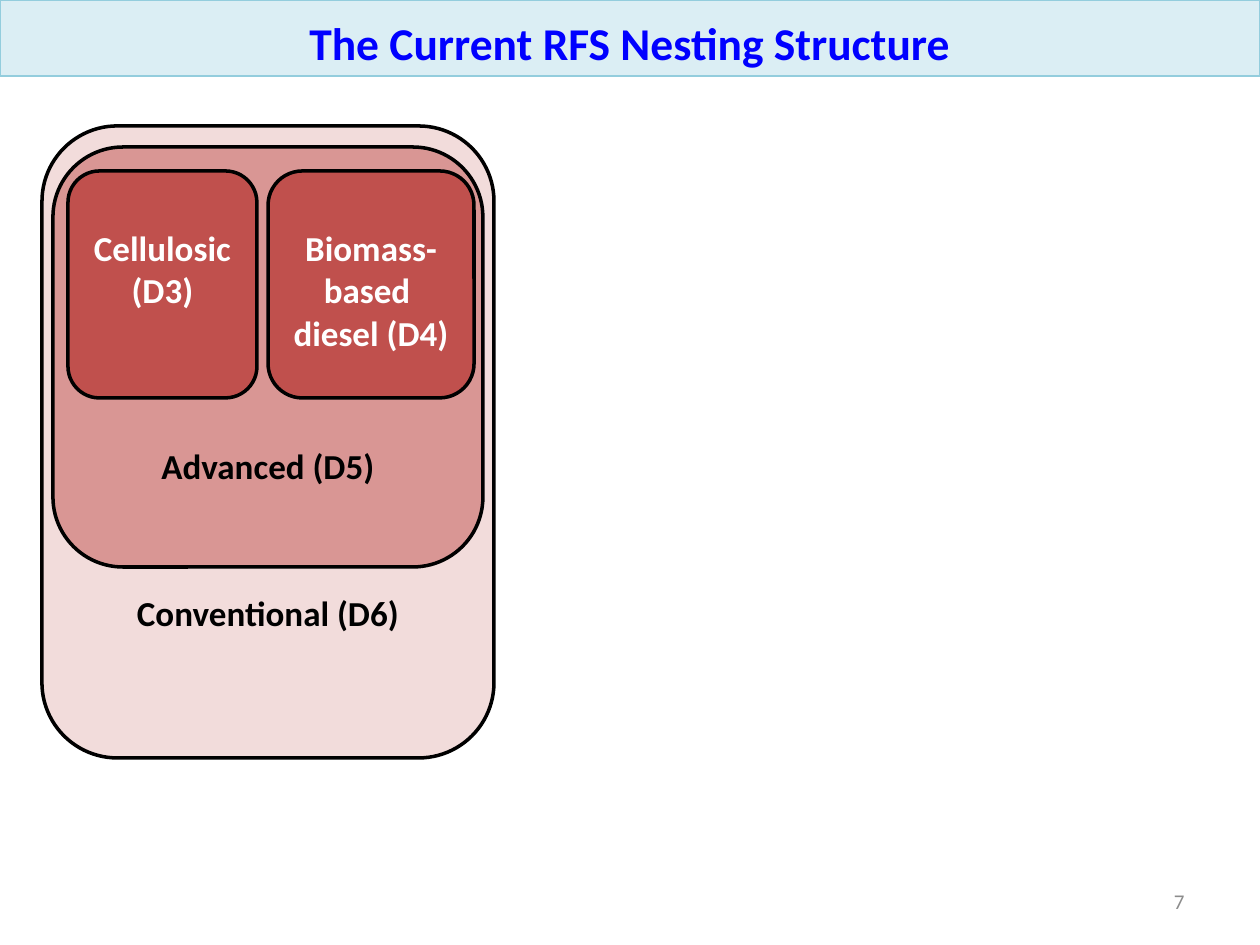
from dataclasses import dataclass

from pptx import Presentation
from pptx.dml.color import RGBColor
from pptx.enum.shapes import MSO_SHAPE
from pptx.enum.text import MSO_ANCHOR, PP_ALIGN
from pptx.util import Emu, Pt

ROUNDED, RECTANGLE = MSO_SHAPE.ROUNDED_RECTANGLE, MSO_SHAPE.RECTANGLE
TOP, MIDDLE, BOTTOM = MSO_ANCHOR.TOP, MSO_ANCHOR.MIDDLE, MSO_ANCHOR.BOTTOM
CENTER, RIGHT = PP_ALIGN.CENTER, PP_ALIGN.RIGHT

BLACK = RGBColor(0x00, 0x00, 0x00)
WHITE = RGBColor(0xFF, 0xFF, 0xFF)
BLUE = RGBColor(0x00, 0x00, 0xFF)
GRAY = RGBColor(0x8C, 0x8C, 0x8C)
PALE_RED = RGBColor(0xF2, 0xDC, 0xDB)
MID_RED = RGBColor(0xD9, 0x96, 0x94)
DEEP_RED = RGBColor(0xC0, 0x50, 0x4D)
PALE_CYAN = RGBColor(0xDB, 0xEE, 0xF4)
CYAN = RGBColor(0x93, 0xCD, 0xDD)

PX_PER_INCH = 126
LABEL_FORMAT = {"name": "Calibri", "size": Pt(20), "bold": True}
TITLE_FORMAT = {"name": "Calibri", "size": Pt(26), "bold": True}
NUMBER_FORMAT = {"name": "Calibri", "size": Pt(12), "bold": False}


@dataclass(frozen=True)
class FuelCategory:
    lines: tuple[str, ...]
    left: int
    top: int
    width: int
    height: int
    label_offset: int
    fill: RGBColor
    text_color: RGBColor


# Outermost first, so that each category lies on the one that contains it
CATEGORIES = (
    FuelCategory(("Conventional (D6)",), 42, 126, 452, 632, 444, PALE_RED, BLACK),
    FuelCategory(("Advanced (D5)",), 53, 147, 430, 420, 277, MID_RED, BLACK),
    FuelCategory(("Cellulosic (D3)",), 68, 171, 189, 227, 46, DEEP_RED, WHITE),
    FuelCategory(("Biomass-based ", "diesel (D4)"), 268, 171, 206, 227, 46, DEEP_RED, WHITE),
)


def px(length: int) -> Emu:
    return Emu(round(length * 914400 / PX_PER_INCH))


def write_text(shape, lines, font_format: dict, color: RGBColor, align, anchor) -> None:
    frame = shape.text_frame
    frame.word_wrap = True
    frame.vertical_anchor = anchor
    for index, line in enumerate(lines):
        paragraph = frame.paragraphs[0] if index == 0 else frame.add_paragraph()
        paragraph.alignment = align
        run = paragraph.add_run()
        run.text = line
        for attribute, value in font_format.items():
            setattr(run.font, attribute, value)
        run.font.color.rgb = color


def add_panel(slide, kind, box: tuple[int, ...], fill: RGBColor, line: RGBColor, line_width: int):
    panel = slide.shapes.add_shape(kind, *map(px, box))
    panel.shadow.inherit = False
    panel.fill.solid()
    panel.fill.fore_color.rgb = fill
    panel.line.color.rgb = line
    panel.line.width = Pt(line_width)
    return panel


def add_category(slide, category: FuelCategory) -> None:
    box = (category.left, category.top, category.width, category.height)
    panel = add_panel(slide, ROUNDED, box, category.fill, BLACK, 2)
    panel.text_frame.margin_top = px(category.label_offset)
    write_text(panel, category.lines, LABEL_FORMAT, category.text_color, CENTER, TOP)


def main() -> None:
    presentation = Presentation()
    presentation.slide_width, presentation.slide_height = px(1260), px(945)
    slide = presentation.slides.add_slide(presentation.slide_layouts[6])

    for category in CATEGORIES:
        add_category(slide, category)

    slide_number = slide.shapes.add_textbox(px(903), px(876), px(294), px(50))
    write_text(slide_number, ("7",), NUMBER_FORMAT, GRAY, RIGHT, MIDDLE)

    title_bar = add_panel(slide, RECTANGLE, (0, 0, 1260, 76), PALE_CYAN, CYAN, 0)
    write_text(title_bar, ("The Current RFS Nesting Structure",), TITLE_FORMAT, BLUE, CENTER, BOTTOM)

    presentation.save("out.pptx")


if __name__ == "__main__":
    main()
